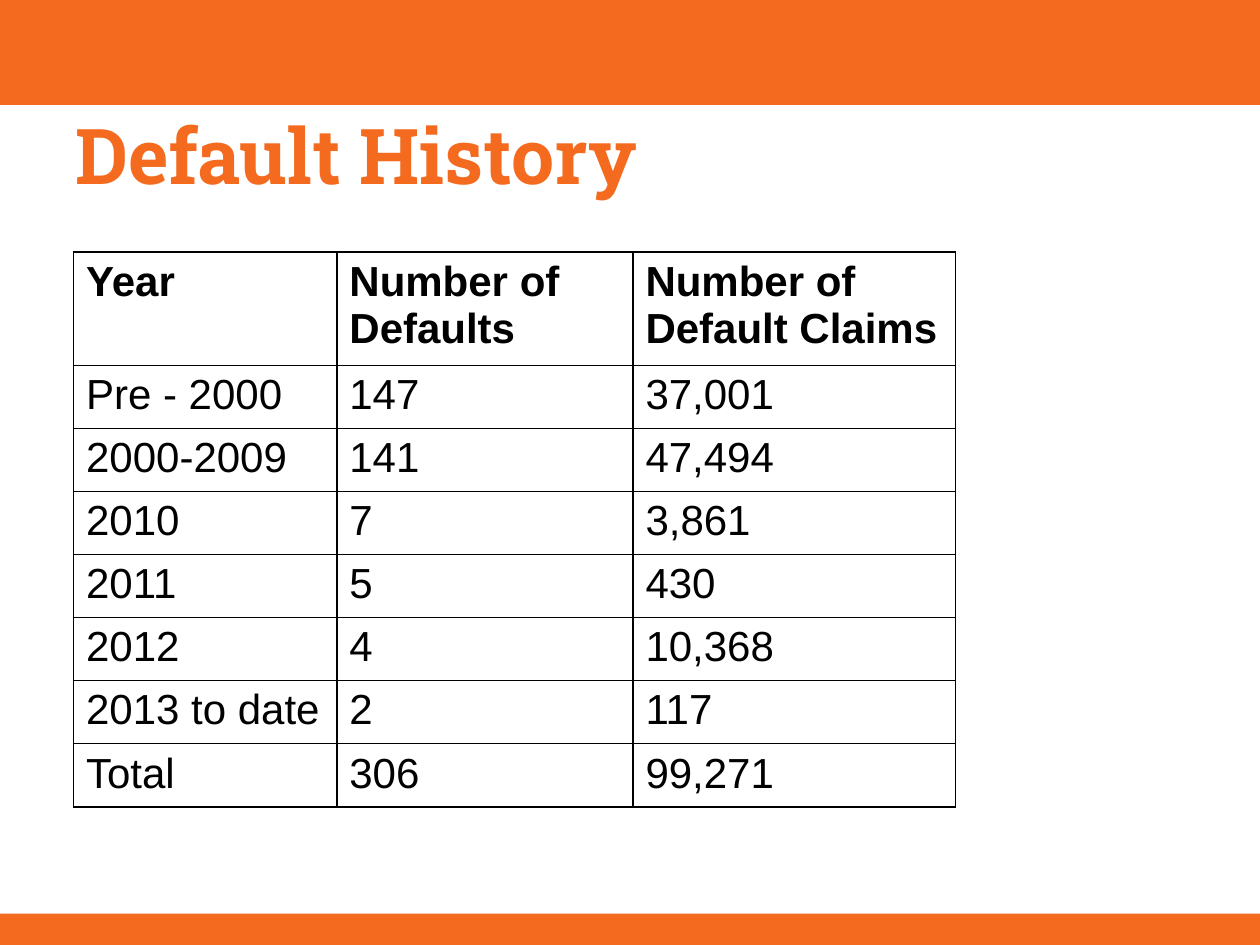
from dataclasses import dataclass

from lxml import etree
from pptx import Presentation
from pptx.dml.color import RGBColor
from pptx.enum.shapes import MSO_SHAPE
from pptx.enum.text import MSO_ANCHOR
from pptx.oxml.ns import qn
from pptx.util import Pt

RECT = MSO_SHAPE.RECTANGLE
MIDDLE = MSO_ANCHOR.MIDDLE


@dataclass(frozen=True)
class Theme:
    accent: str = "F46A1F"
    ink: str = "000000"
    title_font: str = "Roboto Slab"
    body_font: str = "Arial"
    title_size: float = 44
    title_leading: float = 42
    body_size: float = 24
    border: float = 1


THEME = Theme()
WIDTH, HEIGHT = 720, 540
HEADER_HEIGHT, ROW_HEIGHT = 60.8, 33.9
COLUMN_SHARES = (2.09, 2.35, 2.56)
DEFAULTS = [
    ("Year", "Number of Defaults", "Number of Default Claims"),
    ("Pre - 2000", "147", "37,001"),
    ("2000-2009", "141", "47,494"),
    ("2010", "7", "3,861"),
    ("2011", "5", "430"),
    ("2012", "4", "10,368"),
    ("2013 to date", "2", "117"),
    ("Total", "306", "99,271"),
]


def style_text(p, font, size, color, bold):
    for r in p.runs:
        r.font.name = font
        r.font.size = Pt(size)
        r.font.bold = bold
        r.font.color.rgb = RGBColor.from_string(color)


def add_band(s, box):
    sp = s.shapes.add_shape(RECT, *map(Pt, box))
    sp.shadow.inherit = False
    sp.fill.solid()
    sp.fill.fore_color.rgb = RGBColor.from_string(THEME.accent)
    sp.line.fill.background()


def add_title(s, box, text):
    tf = s.shapes.add_textbox(*map(Pt, box)).text_frame
    tf.word_wrap = True
    tf.vertical_anchor = MIDDLE
    tf.text = text
    p = tf.paragraphs[0]
    p.line_spacing = Pt(THEME.title_leading)
    style_text(p, THEME.title_font, THEME.title_size, THEME.accent, True)


def set_borders(cell):
    tc_pr = cell._tc.get_or_add_tcPr()
    for i, side in enumerate(("lnL", "lnR", "lnT", "lnB")):
        ln = etree.Element(qn(f"a:{side}"), w=str(Pt(THEME.border)))
        fill = etree.SubElement(ln, qn("a:solidFill"))
        etree.SubElement(fill, qn("a:srgbClr"), val=THEME.ink)
        tc_pr.insert(i, ln)


def add_default_table(s, box, rows):
    table = s.shapes.add_table(len(rows), len(rows[0]), *map(Pt, box)).table
    table.horz_banding = False
    for column, share in zip(table.columns, COLUMN_SHARES):
        column.width = Pt(box[2] * share / sum(COLUMN_SHARES))
    for i, values in enumerate(rows):
        table.rows[i].height = Pt(ROW_HEIGHT if i else HEADER_HEIGHT)
        for j, value in enumerate(values):
            cell = table.cell(i, j)
            cell.text_frame.text = value
            cell.fill.background()
            set_borders(cell)
            style_text(cell.text_frame.paragraphs[0], THEME.body_font,
                       THEME.body_size, THEME.ink, i == 0)


def main():
    prs = Presentation()
    prs.slide_width, prs.slide_height = Pt(WIDTH), Pt(HEIGHT)
    s = prs.slides.add_slide(prs.slide_layouts[6])
    add_band(s, (0, 0, WIDTH, 60))
    add_band(s, (0, HEIGHT - 18, WIDTH, 18))
    add_title(s, (36, 66, WIDTH - 72, 54), "Default History")
    table_height = HEADER_HEIGHT + ROW_HEIGHT * (len(DEFAULTS) - 1)
    add_default_table(s, (42, 144, 504, table_height), DEFAULTS)
    prs.save("out.pptx")


if __name__ == "__main__":
    main()
